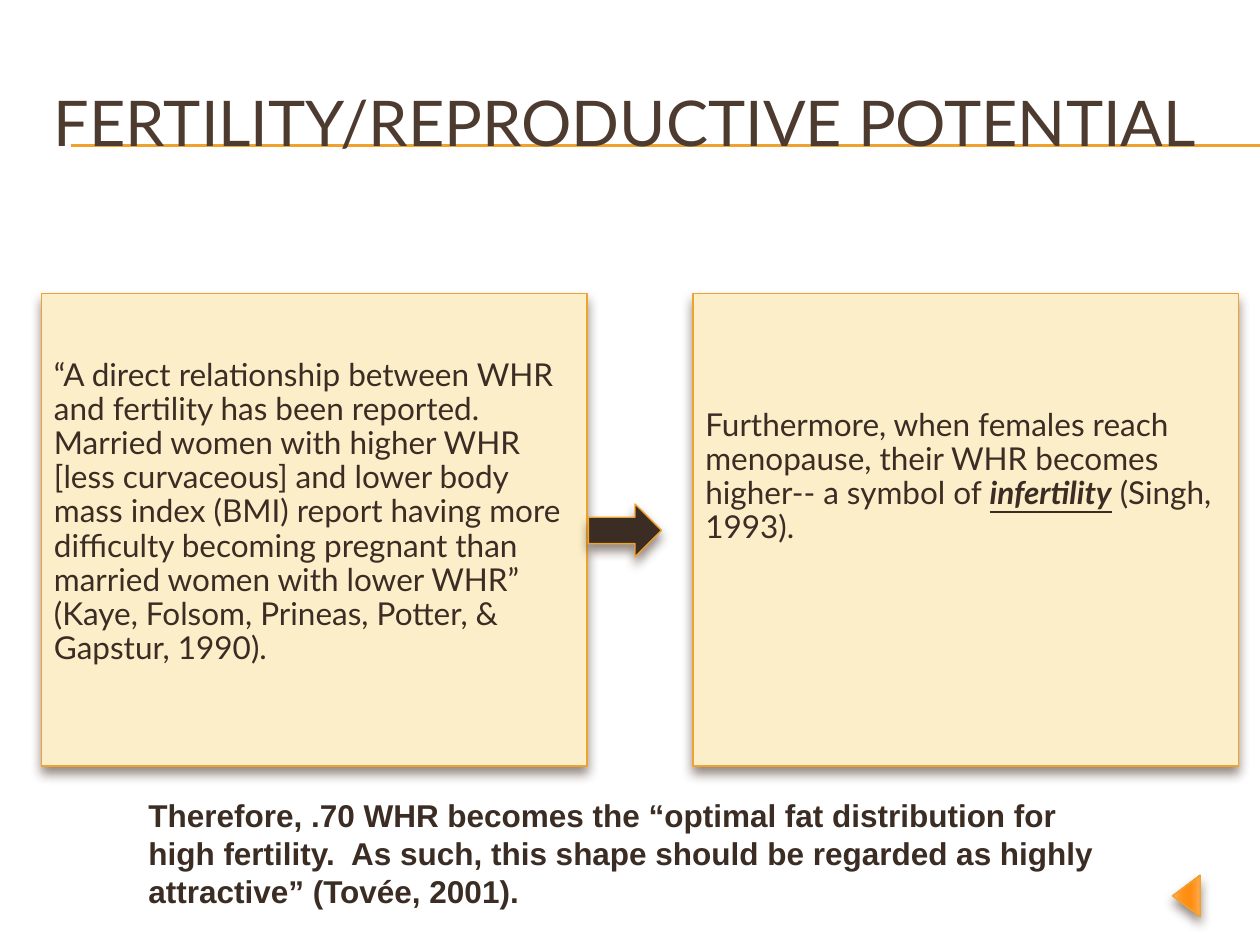
from dataclasses import dataclass, field

from lxml.etree import SubElement
from pptx import Presentation
from pptx.dml.color import RGBColor
from pptx.enum.shapes import MSO_CONNECTOR, MSO_SHAPE
from pptx.enum.text import MSO_ANCHOR, PP_ALIGN
from pptx.oxml.ns import qn
from pptx.util import Inches, Pt

GOLD, CREAM, BROWN, DARK = "F0A22E", "FBEEC9", "4E3B30", "3B2C24"
BODY = {"name": "Lato", "size": Pt(18)}
EMPHASIS = {"bold": True, "italic": True, "underline": True}
TRIANGLE_STOPS = {0: "FFB16A", 25: "FF9826", 50: "FF8D0F",
                  65: "FF8D0F", 80: "FF9724", 100: "FFAA5C"}


@dataclass
class Phrase:
    text: str
    font: dict = field(default_factory=dict)


@dataclass
class Panel:
    left: float
    bottom_inset: float
    phrases: list[Phrase]


def paint(color_format, hex_color: str) -> None:
    color_format.rgb = RGBColor.from_string(hex_color)


def write(shape, phrases: list[Phrase], font: dict, color: str,
          frame_format: dict, line_spacing: float = 1.0) -> None:
    frame = shape.text_frame
    for name, value in ({"word_wrap": True} | frame_format).items():
        setattr(frame, name, value)
    paragraph = frame.paragraphs[0]
    paragraph.alignment = PP_ALIGN.LEFT
    paragraph.line_spacing = line_spacing
    for phrase in phrases:
        run = paragraph.add_run()
        run.text = phrase.text
        for name, value in (font | phrase.font).items():
            setattr(run.font, name, value)
        paint(run.font.color, color)


def add_text(slide, box: tuple, text: str, font: dict, color: str,
             anchor: MSO_ANCHOR) -> None:
    textbox = slide.shapes.add_textbox(*map(Inches, box))
    write(textbox, [Phrase(text)], font, color, {"vertical_anchor": anchor})


def add_rule(slide, y: float) -> None:
    rule = slide.shapes.add_connector(
        MSO_CONNECTOR.STRAIGHT, Inches(0.56), Inches(y), Inches(10), Inches(y))
    paint(rule.line.color, GOLD)
    rule.line.width = Pt(0.75)
    SubElement(rule._element.spPr, qn("a:effectLst"))


def add_raised(slide, preset: MSO_SHAPE, box: tuple, fill: str):
    """Gold-edged shape with a soft shadow straight below it."""
    shape = slide.shapes.add_shape(preset, *map(Inches, box))
    shape.fill.solid()
    paint(shape.fill.fore_color, fill)
    paint(shape.line.color, GOLD)
    shape.line.width = Pt(0.79)
    shape.shadow.inherit = False
    effects = shape._element.spPr.find(qn("a:effectLst"))
    shadow = SubElement(effects, qn("a:outerShdw"), blurRad=str(Pt(6)),
                        dist=str(Pt(4)), dir="5400000", rotWithShape="0")
    tint = SubElement(shadow, qn("a:srgbClr"), val=BROWN)
    SubElement(tint, qn("a:alpha"), val="60000")
    return shape


def fill_gradient(shape, stops: dict[int, str]) -> None:
    shape.fill.gradient()
    shape.fill.gradient_angle = 270
    stop_list = shape._element.spPr.find(f".//{qn('a:gsLst')}")
    stop_list.clear()
    for percent, color in stops.items():
        stop = SubElement(stop_list, qn("a:gs"), pos=str(percent * 1000))
        SubElement(stop, qn("a:srgbClr"), val=color)


PANELS = [
    Panel(0.33, 0.32, [Phrase(
        "“A direct relationship between WHR and fertility has been reported. "
        "Married women with higher WHR [less curvaceous] and lower body mass "
        "index (BMI) report having more difficulty becoming pregnant than "
        "married women with lower WHR” (Kaye, Folsom, Prineas, Potter, & "
        "Gapstur, 1990).")]),
    Panel(5.5, 0.89, [
        Phrase("Furthermore, when females reach menopause, their WHR becomes "
               "higher-- a symbol of "),
        Phrase("infertility", EMPHASIS),
        Phrase(" (Singh, 1993).")]),
]


def main() -> None:
    deck = Presentation()
    deck.slide_width, deck.slide_height = Inches(10), Inches(7.5)
    slide = deck.slides.add_slide(deck.slide_layouts[6])

    # Title over its double rule
    for rule_y in (1.15, 1.16):
        add_rule(slide, rule_y)
    add_text(slide, (0.33, 0.5, 9.5, 0.92), "FERTILITY/REPRODUCTIVE POTENTIAL",
             {"name": "Lato", "size": Pt(36)}, BROWN, MSO_ANCHOR.MIDDLE)

    # Findings; the deeper bottom inset lifts the text above the middle
    for panel in PANELS:
        card = add_raised(slide, MSO_SHAPE.RECTANGLE,
                          (panel.left, 2.33, 4.33, 3.75), CREAM)
        write(card, panel.phrases, BODY, DARK,
              {"vertical_anchor": MSO_ANCHOR.MIDDLE,
               "margin_bottom": Inches(panel.bottom_inset)}, 0.9)

    # Arrow between the findings, and the back marker
    add_raised(slide, MSO_SHAPE.RIGHT_ARROW, (4.67, 4, 0.58, 0.42), DARK)
    back_marker = add_raised(slide, MSO_SHAPE.ISOSCELES_TRIANGLE,
                             (9.25, 7, 0.33, 0.22), GOLD)
    back_marker.rotation = 270
    fill_gradient(back_marker, TRIANGLE_STOPS)

    # Conclusion
    add_text(slide, (1.08, 6.27, 8, 1.01),
             "Therefore, .70 WHR becomes the “optimal fat distribution for "
             "high fertility.  As such, this shape should be regarded as "
             "highly attractive” (Tovée, 2001).",
             {"name": "Arial", "size": Pt(18), "bold": True}, DARK,
             MSO_ANCHOR.TOP)

    deck.save("out.pptx")


if __name__ == "__main__":
    main()
